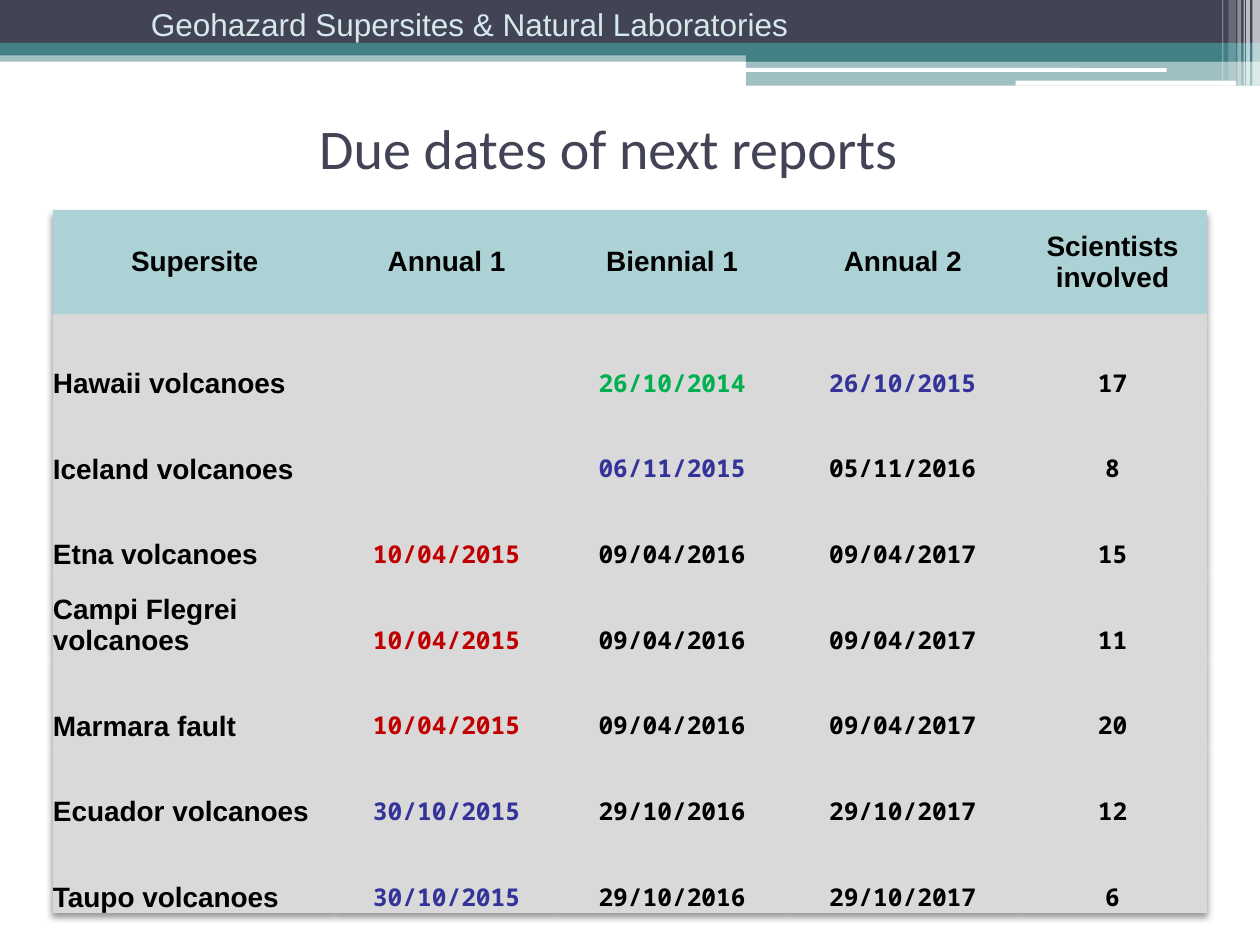
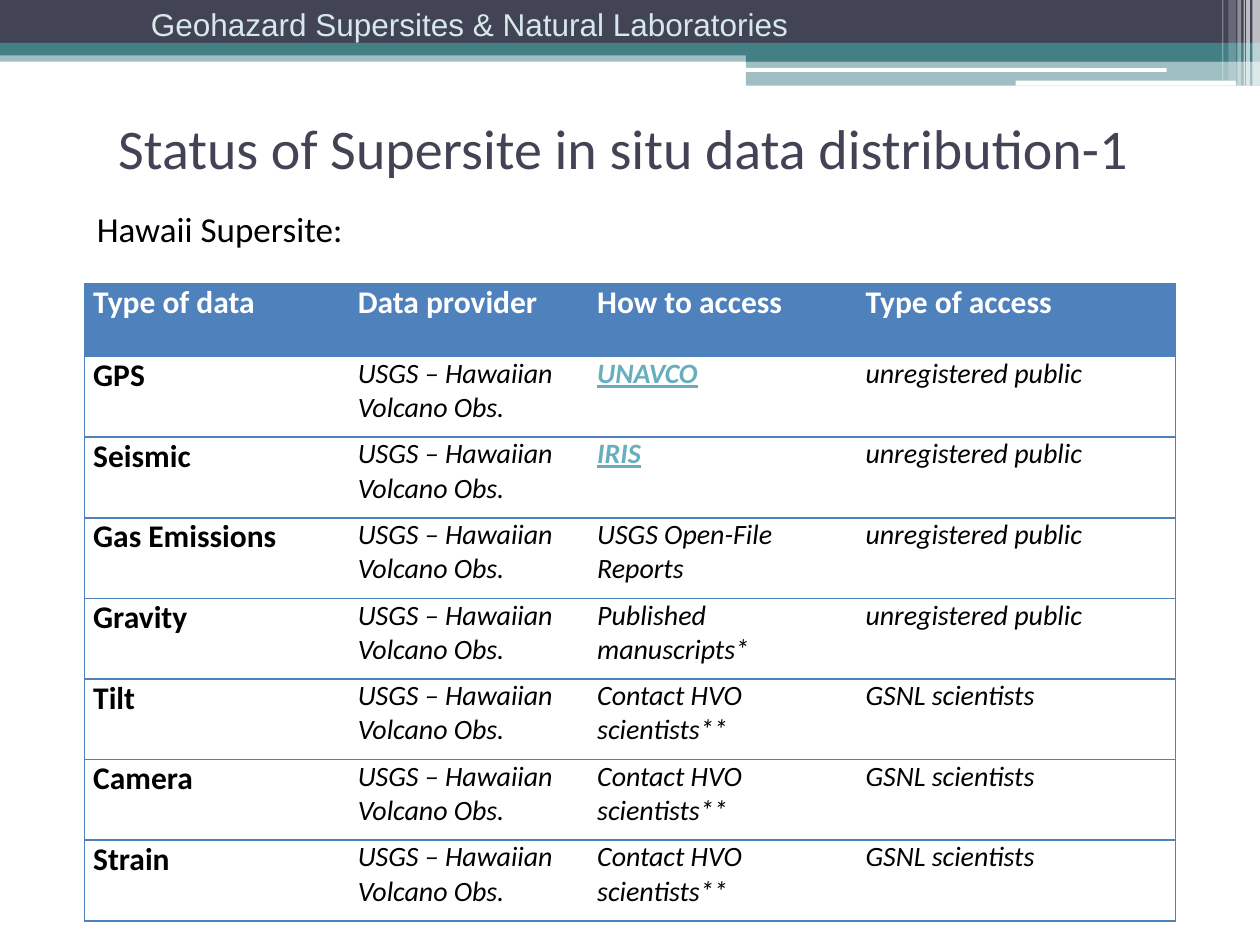
from dataclasses import dataclass

from lxml import etree
from pptx import Presentation
from pptx.dml.color import RGBColor
from pptx.enum.shapes import MSO_SHAPE as Shape
from pptx.enum.text import MSO_ANCHOR as Anchor, PP_ALIGN as Align
from pptx.oxml import parse_xml
from pptx.oxml.ns import nsdecls, qn
from pptx.util import Inches, Pt


@dataclass(frozen=True)
class Theme:
    navy: str = "424456"
    teal: str = "438086"
    white: str = "FFFFFF"
    black: str = "000000"
    banner_text: str = "D6E9EA"
    header_fill: str = "ADD2D6"
    body_fill: str = "D9D9D9"
    grid_blue: str = "4F81BD"
    link: str = "67AFBD"
    green: str = "00B050"
    blue: str = "333399"
    red: str = "C00000"
    heading_font: str = "Calibri"
    banner_font: str = "Arial"
    date_font: str = "Noto Sans Mono"
    title_size: int = 32
    subtitle_size: int = 20
    large_size: int = 18
    body_size: int = 16
    date_size: int = 14


theme = Theme()
NO_STYLE = "{2D5ABB26-0587-4C30-8999-92F81FD0307C}"


def write_text(text_frame, text, font, size, color, align=Align.LEFT,
               bold=False, italic=False, underline=False):
    text_frame.text = text
    text_frame.word_wrap = True
    paragraph = text_frame.paragraphs[0]
    paragraph.alignment = align
    for run in paragraph.runs:
        run.font.name = font
        run.font.size = Pt(size)
        run.font.color.rgb = RGBColor.from_string(color)
        run.font.bold = bold
        run.font.italic = italic
        run.font.underline = underline


def add_plain_table(slide, left, top, column_widths, row_heights):
    frame = slide.shapes.add_table(
        len(row_heights), len(column_widths), Inches(left), Inches(top),
        Inches(sum(column_widths)), Inches(sum(row_heights)))
    table = frame.table
    table.horz_banding = False
    table._tbl.tblPr.find(qn("a:tableStyleId")).text = NO_STYLE
    for column, width in zip(table.columns, column_widths):
        column.width = Inches(width)
    for row, height in zip(table.rows, row_heights):
        row.height = Inches(height)
    return table


presentation = Presentation()
presentation.slide_width = Inches(10)
presentation.slide_height = Inches(7.5)

# Banner parts: left, top, width, height, colour, opacity in percent
banner_bands = [
    (0, 0.4, 10, 0.09, theme.teal, 50),
    (0, 0, 10, 0.34, theme.navy, 100),
    (0, 0.34, 10, 0.1, theme.teal, 100),
    (5.92, 0.39, 4.08, 0.1, theme.teal, 100),
    (5.92, 0.48, 4.08, 0.2, theme.teal, 50),
]
banner_lines = [
    (5.91, 0.54, 3.35, 0.03, theme.white, 100),
    (8.06, 0.64, 1.75, 0.04, theme.white, 100),
]
banner_stripes = [
    (left, 0, width, height, theme.white, opacity)
    for left, width, height, opacity in [
        (9.94, 0.06, 0.68, 65), (9.89, 0.03, 0.68, 65), (9.87, 0.01, 0.68, 60),
        (9.82, 0.03, 0.68, 40), (9.75, 0.06, 0.64, 20), (9.7, 0.01, 0.64, 30)]
]
banner_parts = (
    [(Shape.RECTANGLE, *band) for band in banner_bands]
    + [(Shape.ROUNDED_RECTANGLE, *line) for line in banner_lines]
    + [(Shape.RECTANGLE, *stripe) for stripe in banner_stripes])

# Shared banner and title on every slide
slide_titles = [
    ("Due dates of next reports", 0.58),
    ("Status of Supersite in situ data distribution-1 ", 0.75),
]
slides = []
for title, title_left in slide_titles:
    slide = presentation.slides.add_slide(presentation.slide_layouts[6])
    slides.append(slide)
    for kind, left, top, width, height, color, opacity in banner_parts:
        shape = slide.shapes.add_shape(
            kind, Inches(left), Inches(top), Inches(width), Inches(height))
        shape.shadow.inherit = False
        shape.line.fill.background()
        shape.fill.solid()
        shape.fill.fore_color.rgb = RGBColor.from_string(color)
        if opacity < 100:
            color_element = shape._element.spPr.find(".//" + qn("a:srgbClr"))
            alpha = etree.SubElement(color_element, qn("a:alpha"))
            alpha.set("val", str(opacity * 1000))

    banner_box = slide.shapes.add_textbox(
        Inches(1.1), Inches(-0.01), Inches(5.43), Inches(0.4))
    write_text(banner_box.text_frame, "Geohazard Supersites & Natural Laboratories",
               theme.banner_font, theme.large_size, theme.banner_text)
    banner_box.text_frame.word_wrap = False

    title_box = slide.shapes.add_textbox(
        Inches(title_left), Inches(0.67), Inches(8.5), Inches(1))
    title_box.text_frame.vertical_anchor = Anchor.MIDDLE
    write_text(title_box.text_frame, title, theme.heading_font,
               theme.title_size, theme.navy, Align.CENTER)

due_slide, status_slide = slides

# Due dates table
due_rows = [
    ("Supersite", "Annual 1", "Biennial 1", "Annual 2", "Scientists involved"),
    ("Hawaii volcanoes", "", "26/10/2014", "26/10/2015", "17"),
    ("Iceland volcanoes", "", "06/11/2015", "05/11/2016", "8"),
    ("Etna volcanoes", "10/04/2015", "09/04/2016", "09/04/2017", "15"),
    ("Campi Flegrei volcanoes", "10/04/2015", "09/04/2016", "09/04/2017", "11"),
    ("Marmara fault", "10/04/2015", "09/04/2016", "09/04/2017", "20"),
    ("Ecuador volcanoes", "30/10/2015", "29/10/2016", "29/10/2017", "12"),
    ("Taupo volcanoes", "30/10/2015", "29/10/2016", "29/10/2017", "6"),
]
date_colors = {
    "26/10/2014": theme.green,
    "10/04/2015": theme.red,
    "26/10/2015": theme.blue,
    "30/10/2015": theme.blue,
    "06/11/2015": theme.blue,
}
due_table = add_plain_table(due_slide, 0.42, 1.67, [2.25, 1.75, 1.83, 1.83, 1.5],
                            [0.82] + [0.68] * 7)
due_table._tbl.tblPr.insert(0, parse_xml(
    f'<a:effectLst {nsdecls("a")}>'
    '<a:outerShdw blurRad="50800" dist="38100" dir="5400000" algn="t" rotWithShape="0">'
    '<a:srgbClr val="000000"><a:alpha val="40000"/></a:srgbClr>'
    '</a:outerShdw></a:effectLst>'))
for row_index, row in enumerate(due_rows):
    is_header = row_index == 0
    for column_index, text in enumerate(row):
        cell = due_table.cell(row_index, column_index)
        cell.margin_left = cell.margin_right = cell.margin_top = cell.margin_bottom = 0
        cell.vertical_anchor = Anchor.MIDDLE if is_header else Anchor.BOTTOM
        cell.fill.solid()
        cell.fill.fore_color.rgb = RGBColor.from_string(
            theme.header_fill if is_header else theme.body_fill)
        is_label = is_header or column_index == 0
        write_text(
            cell.text_frame, text,
            theme.banner_font if is_label else theme.date_font,
            theme.body_size if is_label else theme.date_size,
            date_colors.get(text, theme.black),
            Align.CENTER if is_header or column_index > 0 else Align.LEFT,
            bold=True)

# Supersite subtitle
subtitle_box = status_slide.shapes.add_textbox(
    Inches(0.67), Inches(1.6), Inches(8.67), Inches(0.5))
write_text(subtitle_box.text_frame, "Hawaii Supersite:", theme.heading_font,
           theme.subtitle_size, theme.black, Align.JUSTIFY)

# Data distribution table
provider = "USGS – Hawaiian Volcano Obs."
public, scientists = "unregistered public", "GSNL scientists"
contact = "Contact HVO scientists**"
links = ("UNAVCO", "IRIS")
status_rows = [
    ("Type of data", "Data provider", "How to access", "Type of access"),
    ("GPS", provider, "UNAVCO", public),
    ("Seismic", provider, "IRIS", public),
    ("Gas Emissions", provider, "USGS Open-File Reports", public),
    ("Gravity", provider, "Published manuscripts*", public),
    ("Tilt", provider, contact, scientists),
    ("Camera", provider, contact, scientists),
    ("Strain", provider, contact, scientists),
]
status_table = add_plain_table(status_slide, 0.67, 2.25, [2.1, 1.9, 2.13, 2.53],
                               [0.58] + [0.64] * 7)
for row_index, row in enumerate(status_rows):
    is_header = row_index == 0
    for column_index, text in enumerate(row):
        cell = status_table.cell(row_index, column_index)
        cell.margin_left = cell.margin_right = Inches(0.07)
        cell.margin_top = cell.margin_bottom = 0

        # Horizontal rules everywhere, vertical ones on the outer sides only
        sides = ["lnT", "lnB"]
        if column_index == 0:
            sides.insert(0, "lnL")
        if column_index == len(row) - 1:
            sides.insert(0, "lnR")
        for side in sides:
            cell._tc.get_or_add_tcPr().append(parse_xml(
                f'<a:{side} {nsdecls("a")} w="{Pt(1)}"><a:solidFill>'
                f'<a:srgbClr val="{theme.grid_blue}"/></a:solidFill></a:{side}>'))

        if is_header:
            cell.fill.solid()
            cell.fill.fore_color.rgb = RGBColor.from_string(theme.grid_blue)
            color = theme.white
        else:
            cell.fill.background()
            color = theme.link if text in links else theme.black
        is_label = is_header or column_index == 0
        write_text(
            cell.text_frame, text, theme.heading_font,
            theme.large_size if is_label else theme.body_size, color,
            bold=is_label or text in links,
            italic=not is_label, underline=text in links)

presentation.save("out.pptx")
